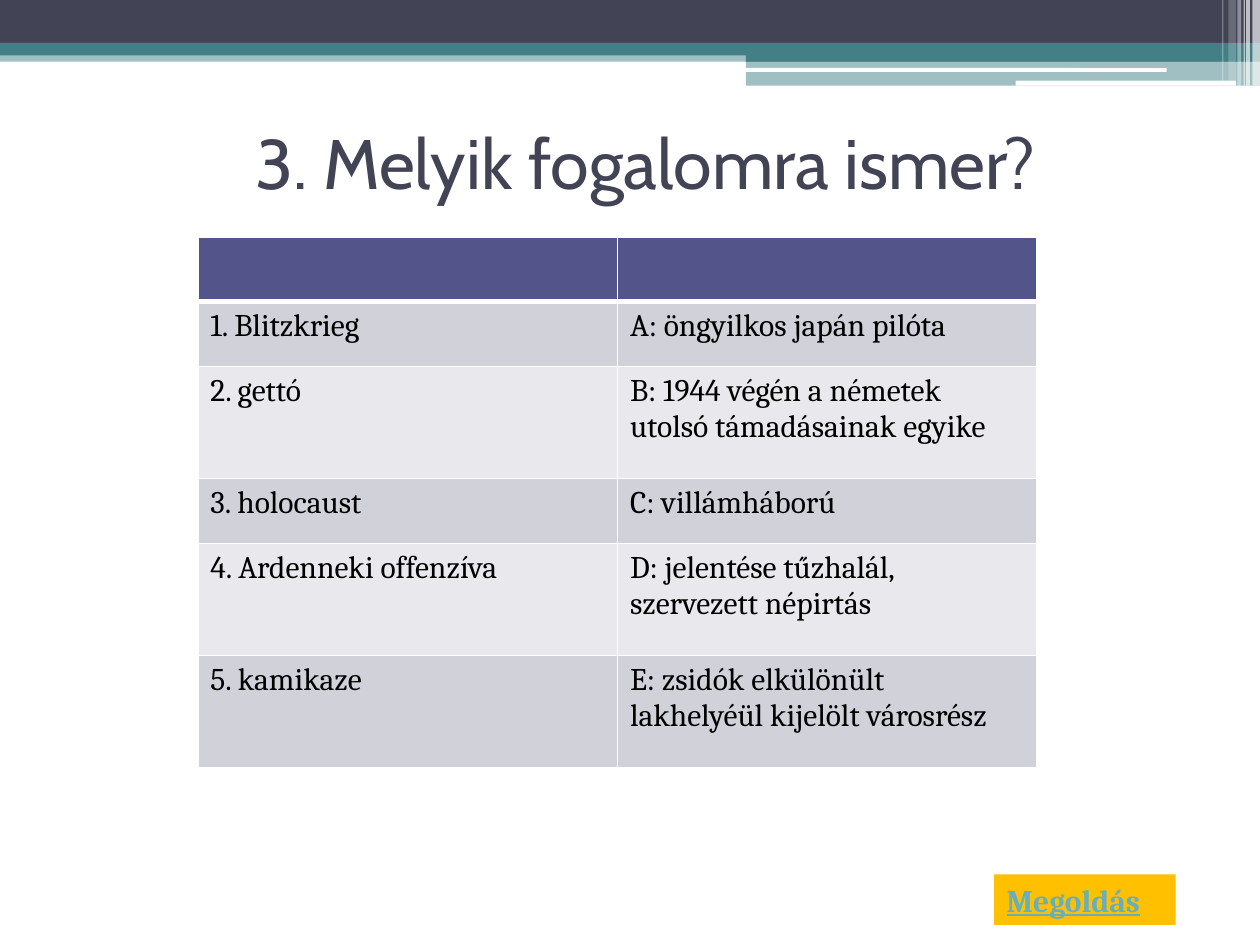
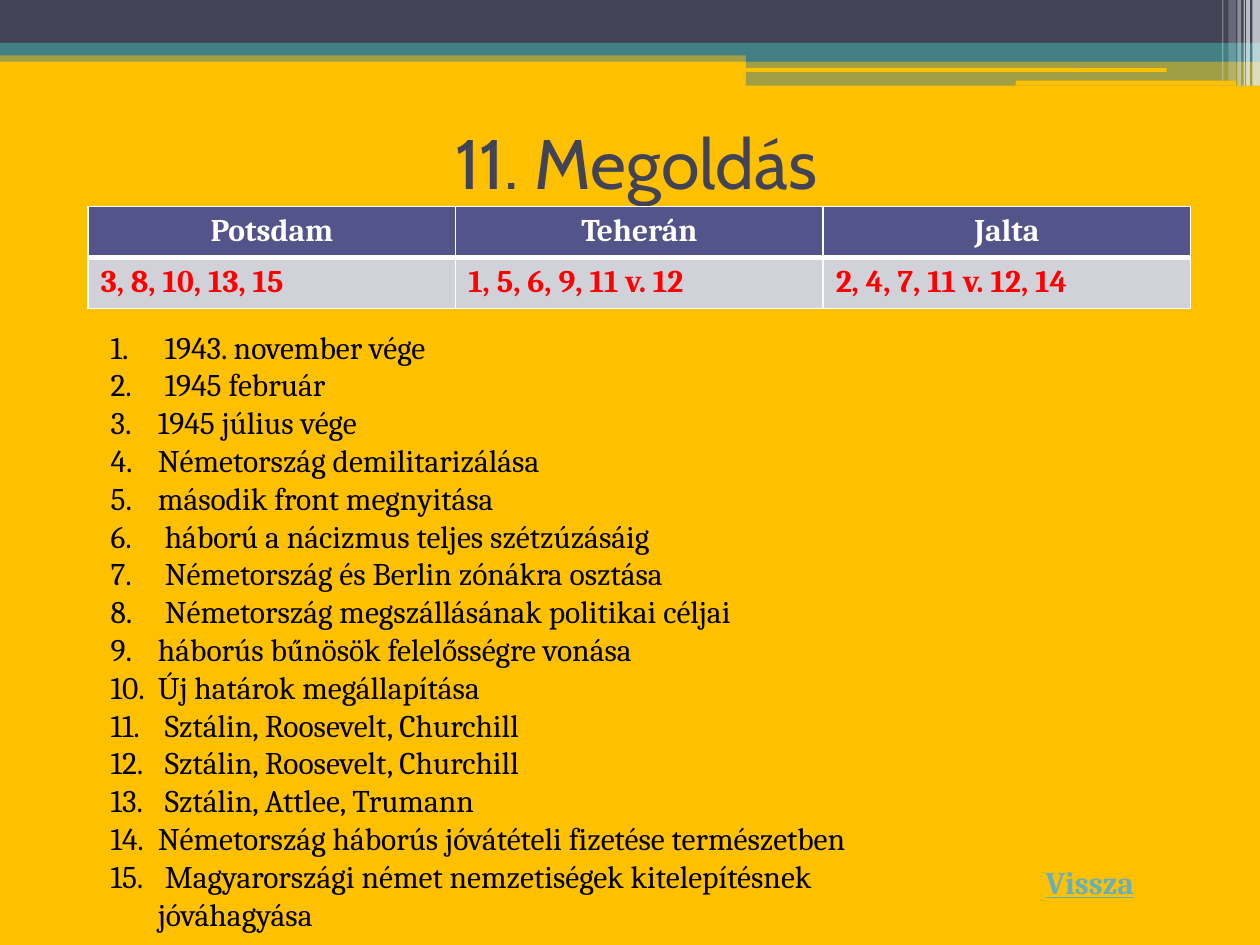
from dataclasses import dataclass

from lxml import etree
from pptx import Presentation
from pptx.dml.color import RGBColor
from pptx.enum.shapes import MSO_SHAPE
from pptx.enum.text import MSO_ANCHOR, MSO_AUTO_SIZE, PP_ALIGN
from pptx.oxml.ns import qn
from pptx.util import Inches, Pt

RECTANGLE = MSO_SHAPE.RECTANGLE
ROUNDED = MSO_SHAPE.ROUNDED_RECTANGLE
MIDDLE = MSO_ANCHOR.MIDDLE
CENTER = PP_ALIGN.CENTER
LEFT = PP_ALIGN.LEFT
FIT_SHAPE = MSO_AUTO_SIZE.SHAPE_TO_FIT_TEXT
FIT_NONE = MSO_AUTO_SIZE.NONE
TITLE_ONLY = 5
COLUMNS, ROWS = 100, 75


@dataclass(frozen=True)
class Theme:
    heading_font: str = "Cabin"
    body_font: str = "Cambria"
    heading_size: int = 40
    body_size: int = 18
    dark: str = "424456"
    teal: str = "438086"
    white: str = "FFFFFF"
    black: str = "000000"
    amber: str = "FFC000"
    link: str = "67AFBD"
    answer: str = "FF0000"
    table_header: str = "53548A"
    table_bands: tuple = ("D1D1DA", "E9E9ED")
    thin_border: float = 1
    thick_border: float = 3
    text_outline: float = 1.4


THEME = Theme()

BANDS = [
    (0, 4, 100, 0.9, THEME.teal, 50),
    (0, 0, 100, 3.4, THEME.dark, 100),
    (0, 3.4, 100, 1, THEME.teal, 100),
    (59.2, 3.9, 40.8, 1, THEME.teal, 100),
    (59.2, 4.8, 40.8, 2, THEME.teal, 50),
]
GAPS = [(59.1, 5.4, 33.5, 0.3), (80.6, 6.4, 17.5, 0.4)]
STRIPES = [
    (99.4, 0.6, 6.8, 65),
    (98.9, 0.3, 6.8, 65),
    (98.7, 0.1, 6.8, 60),
    (98.2, 0.3, 6.8, 40),
    (97.5, 0.6, 6.4, 20),
    (97, 0.1, 6.4, 30),
]

CONCEPTS = [
    ("", ""),
    ("1. Blitzkrieg", "A: öngyilkos japán pilóta"),
    ("2. gettó", "B: 1944 végén a németek utolsó támadásainak egyike"),
    ("3. holocaust", "C: villámháború"),
    ("4. Ardenneki offenzíva", "D: jelentése tűzhalál, szervezett népirtás"),
    ("5. kamikaze", "E: zsidók elkülönült lakhelyéül kijelölt városrész"),
]
CONFERENCES = [
    ("Potsdam", "Teherán", "Jalta"),
    ("3, 8, 10, 13, 15", "1, 5, 6, 9, 11 v. 12", "2, 4, 7, 11 v. 12, 14"),
]
STATEMENTS = [
    " 1943. november vége",
    " 1945 február",
    "1945 július vége",
    "Németország demilitarizálása",
    "második front megnyitása",
    " háború a nácizmus teljes szétzúzásáig",
    " Németország és Berlin zónákra osztása",
    " Németország megszállásának politikai céljai",
    "háborús bűnösök felelősségre vonása",
    "Új határok megállapítása",
    " Sztálin, Roosevelt, Churchill",
    " Sztálin, Roosevelt, Churchill",
    " Sztálin, Attlee, Trumann",
    "Németország háborús jóvátételi fizetése természetben",
    " Magyarországi német nemzetiségek kitelepítésnek jóváhagyása",
]


def apply(target, values):
    for name, value in values.items():
        setattr(target, name, value)


def add_solid_line(parent, tag, width, color):
    line = etree.SubElement(parent, qn(tag), w=str(Pt(width)))
    fill = etree.SubElement(line, qn("a:solidFill"))
    etree.SubElement(fill, qn("a:srgbClr"), val=color)
    return line


class Deck:
    def __init__(self, theme):
        self.theme = theme
        self.presentation = Presentation()
        apply(self.presentation, {"slide_width": Inches(10), "slide_height": Inches(7.5)})
        self.slide = None

    def across(self, columns):
        return round(self.presentation.slide_width * columns / COLUMNS)

    def down(self, rows):
        return round(self.presentation.slide_height * rows / ROWS)

    def box(self, left, top, width, height):
        return self.across(left), self.down(top), self.across(width), self.down(height)

    def fill(self, target, color):
        target.fill.solid()
        target.fill.fore_color.rgb = RGBColor.from_string(color)

    def add_text(self, paragraph, text, color, **font):
        run = paragraph.add_run()
        run.text = text
        values = {"name": self.theme.body_font, "size": Pt(self.theme.body_size)}
        apply(run.font, values | font)
        run.font.color.rgb = RGBColor.from_string(color)
        return run

    def new_slide(self, title, title_left, background):
        layout = self.presentation.slide_layouts[TITLE_ONLY]
        self.slide = self.presentation.slides.add_slide(layout)
        self.fill(self.slide.background, background)
        self.decorate(background)
        self.title(title, title_left)

    def decorate(self, background):
        for *place, color, opacity in BANDS:
            self.block(RECTANGLE, place, color, opacity)
        for place in GAPS:
            self.block(ROUNDED, place, background)
        for left, width, height, opacity in STRIPES:
            self.block(RECTANGLE, (left, 0, width, height), self.theme.white, opacity)

    def block(self, kind, place, color, opacity=100):
        shape = self.slide.shapes.add_shape(kind, *self.box(*place))
        shape.shadow.inherit = False
        shape.line.fill.background()
        self.fill(shape, color)
        if opacity < 100:
            color_element = shape._element.spPr.find(".//" + qn("a:srgbClr"))
            etree.SubElement(color_element, qn("a:alpha"), val=str(opacity * 1000))

    def title(self, text, left):
        shape = self.slide.shapes.title
        places = self.box(left, 7, 90, 11.7)
        apply(shape, dict(zip(("left", "top", "width", "height"), places)))
        frame = shape.text_frame
        apply(frame, {"vertical_anchor": MIDDLE, "word_wrap": True, "auto_size": FIT_NONE})
        paragraph = frame.paragraphs[0]
        paragraph.alignment = CENTER
        self.add_text(paragraph, text, self.theme.dark,
                      name=self.theme.heading_font, size=Pt(self.theme.heading_size))

    def text_box(self, place, wrap):
        shape = self.slide.shapes.add_textbox(*self.box(*place))
        apply(shape.text_frame, {"word_wrap": wrap, "auto_size": FIT_SHAPE})
        return shape

    def navigation(self, text, place, color=None):
        shape = self.text_box(place, False)
        if color:
            self.fill(shape, color)
        run = self.add_text(shape.text_frame.paragraphs[0], text, self.theme.link,
                            bold=True, underline=True)
        properties = run._r.get_or_add_rPr()
        outline = add_solid_line(properties, "a:ln", self.theme.text_outline, self.theme.white)
        properties.insert(0, outline)

    def numbered_list(self, items, place):
        frame = self.text_box(place, True).text_frame
        indent = self.across(3.75)
        for index, item in enumerate(items):
            paragraph = frame.add_paragraph() if index else frame.paragraphs[0]
            self.add_text(paragraph, item, self.theme.black)
            properties = paragraph._p.get_or_add_pPr()
            properties.set("marL", str(indent))
            properties.set("indent", str(-indent))
            etree.SubElement(properties, qn("a:buFont"), typeface="+mj-lt")
            etree.SubElement(properties, qn("a:buAutoNum"), type="arabicPeriod")

    def borders(self, cell, bottom):
        properties = cell._tc.get_or_add_tcPr()
        thin = self.theme.thin_border
        widths = {"a:lnL": thin, "a:lnR": thin, "a:lnT": thin, "a:lnB": bottom}
        for position, (tag, width) in enumerate(widths.items()):
            line = add_solid_line(properties, tag, width, self.theme.white)
            properties.insert(position, line)

    def table(self, rows, place, heights, body_color, body_bold=False):
        theme = self.theme
        size = len(rows), len(rows[0])
        table = self.slide.shapes.add_table(*size, *self.box(*place)).table
        table.horz_banding = False
        for column in table.columns:
            column.width = self.across(place[2] / size[1])
        for index, (texts, height) in enumerate(zip(rows, heights)):
            table.rows[index].height = self.down(height)
            header = index == 0
            fill = theme.table_header if header else theme.table_bands[(index - 1) % 2]
            bottom = theme.thick_border if header else theme.thin_border
            for cell, text in zip(table.rows[index].cells, texts):
                self.fill(cell, fill)
                self.borders(cell, bottom)
                paragraph = cell.text_frame.paragraphs[0]
                paragraph.alignment = CENTER if header else LEFT
                if text:
                    self.add_text(paragraph, text, theme.white if header else body_color,
                                  bold=header or body_bold)


def main():
    deck = Deck(THEME)

    deck.new_slide("3. Melyik fogalomra ismer?", 6.2, THEME.white)
    deck.navigation("Megoldás", (78.9, 69.4, 14.4, 4), THEME.amber)
    short, tall = 5.15, 8.9
    deck.table(CONCEPTS, (15.7, 18.8, 66.6, 42.2),
               (short, short, tall, short, tall, tall), THEME.black)

    deck.new_slide("11. Megoldás", 5.5, THEME.amber)
    deck.navigation("Vissza", (82, 68, 10.3, 4))
    deck.table(CONFERENCES, (7, 16.4, 87.5, 8.1), (4.05, 4.05), THEME.answer, True)
    deck.numbered_list(STATEMENTS, (7.8, 25.5, 66.4, 49.5))

    deck.presentation.save("out.pptx")


if __name__ == "__main__":
    main()
